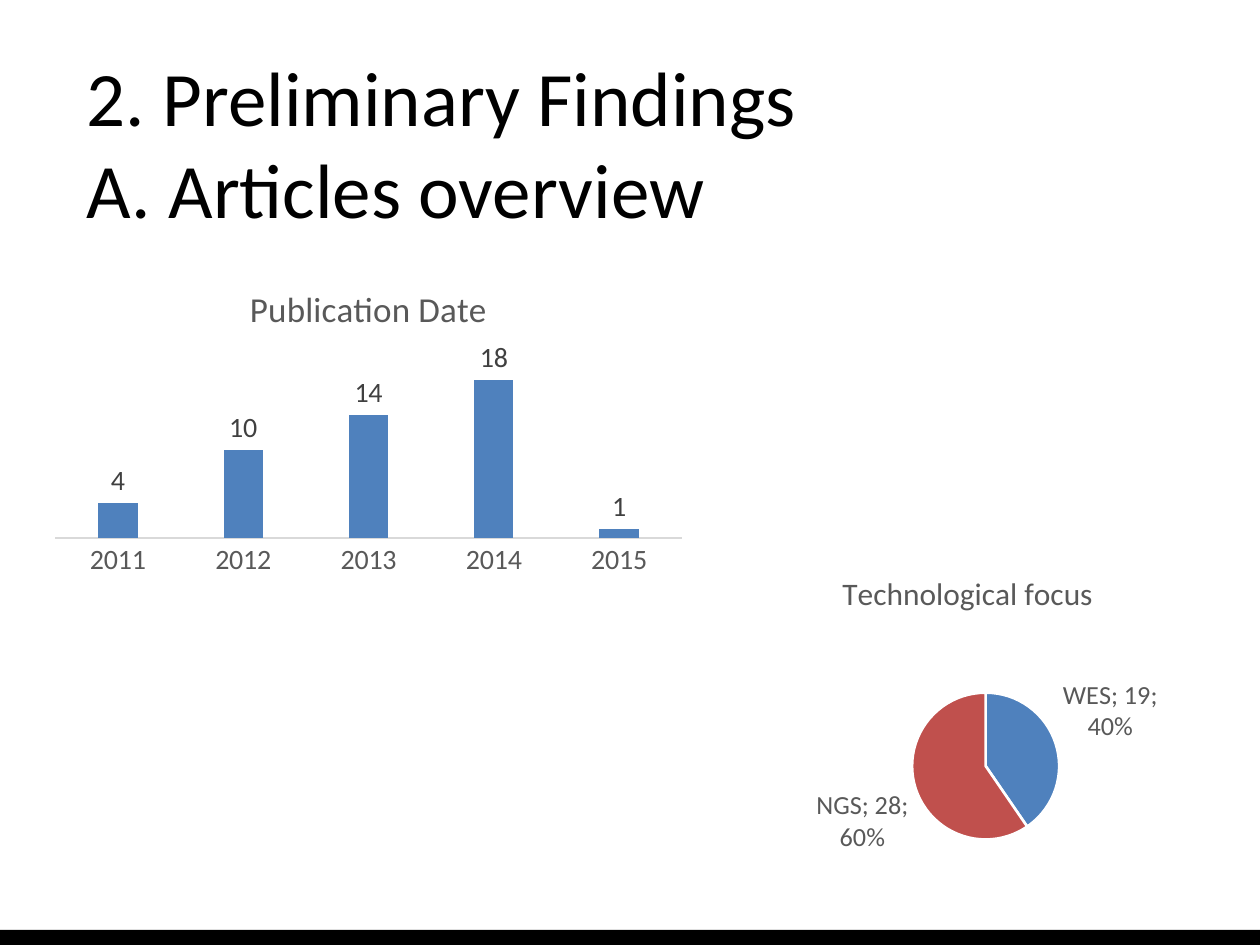
import pptx
import pptx.util
import pptx.chart.data
import pptx.dml.color
import pptx.enum.chart
import pptx.enum.shapes
import pptx.enum.text
import pptx.oxml

Inches, Pt = pptx.util.Inches, pptx.util.Pt
XL = pptx.enum.chart
COLORS = {"black": "000000", "white": "FFFFFF", "blue": "4F81BD", "red": "C0504D",
          "gray": "595959", "dark": "404040", "axis": "D9D9D9"}
FONT = "Calibri"


def rgb(name):
    return pptx.dml.color.RGBColor.from_string(COLORS[name])


def set_font(font, size, color):
    for key, value in {"name": FONT, "size": Pt(size), "bold": False}.items():
        setattr(font, key, value)
    font.color.rgb = rgb(color)


prs = pptx.Presentation()
prs.slide_width, prs.slide_height = Inches(10), Inches(7.5)
s = prs.slides.add_slide(prs.slide_layouts[6])

# Bottom bar
sp = s.shapes.add_shape(pptx.enum.shapes.MSO_SHAPE.RECTANGLE,
                        Inches(0), Inches(7.38), Inches(10), Inches(0.12))
sp.shadow.inherit = False
sp.fill.solid()
sp.fill.fore_color.rgb = rgb("black")
sp.line.fill.background()

# Heading
tf = s.shapes.add_textbox(Inches(0.59), Inches(0.4), Inches(8.95), Inches(1.45)).text_frame
for key, value in {"word_wrap": True,
                   "vertical_anchor": pptx.enum.text.MSO_ANCHOR.MIDDLE}.items():
    setattr(tf, key, value)
for i, text in enumerate(["2. Preliminary Findings", "A. Articles overview"]):
    p = tf.paragraphs[0] if i == 0 else tf.add_paragraph()
    r = p.add_run()
    r.text = text
    set_font(r.font, 44, "black")

# Charts: shared title, labels and plot position
specs = [
    {"type": XL.XL_CHART_TYPE.COLUMN_CLUSTERED, "at": (0.28, 2.1, 5.29, 2.68),
     "title": "Publication Date", "title_size": 20,
     "data": {"2011": 4, "2012": 10, "2013": 14, "2014": 18, "2015": 1},
     "label": (16, "dark"), "plot": (0.03, 0.29, 0.94, 0.52),
     "show": {"show_value": True}},
    {"type": XL.XL_CHART_TYPE.PIE, "at": (5.63, 4.38, 4.1, 2.66),
     "title": "Technological focus", "title_size": 18,
     "data": {"WES": 19, "NGS": 28},
     "label": (15, "gray"), "plot": (0.39, 0.42, 0.29, 0.44),
     "show": {"show_category_name": True, "show_value": True, "show_percentage": True}},
]
charts = []
for spec in specs:
    data = pptx.chart.data.CategoryChartData()
    data.categories = list(spec["data"])
    data.add_series("Series 1", list(spec["data"].values()))
    chart = s.shapes.add_chart(spec["type"], *map(Inches, spec["at"]), data).chart
    charts.append(chart)
    set_font(chart.font, 10, "black")
    chart.has_legend = False
    chart.has_title = True
    r = chart.chart_title.text_frame.paragraphs[0].add_run()
    r.text = spec["title"]
    set_font(r.font, spec["title_size"], "gray")
    chart.chart_title.include_in_layout = False

    labels = chart.plots[0].series[0].data_labels
    formats = {"show_value": True, "position": XL.XL_LABEL_POSITION.OUTSIDE_END}
    for key, value in {**formats, **spec["show"]}.items():
        setattr(labels, key, value)
    set_font(labels.font, *spec["label"])

    # Fixed inner plot area
    area = chart.plots[0]._element.getparent()
    for old in area.findall(pptx.oxml.ns.qn("c:layout")):
        area.remove(old)
    sizes = "".join(f'<c:{k} val="{v}"/>' for k, v in zip("xywh", spec["plot"]))
    area.insert(0, pptx.oxml.parse_xml(
        f'<c:layout {pptx.oxml.ns.nsdecls("c")}><c:manualLayout>'
        '<c:layoutTarget val="inner"/><c:xMode val="edge"/><c:yMode val="edge"/>'
        f'{sizes}</c:manualLayout></c:layout>'))

# Publication columns
column, pie = charts
plot = column.plots[0]
for key, value in {"gap_width": 219, "overlap": -27, "vary_by_categories": False}.items():
    setattr(plot, key, value)
fill = plot.series[0].format.fill
fill.solid()
fill.fore_color.rgb = rgb("blue")
axis = column.value_axis
for key, value in {"visible": False, "has_major_gridlines": False,
                   "minimum_scale": 0, "maximum_scale": 20}.items():
    setattr(axis, key, value)
axis = column.category_axis
axis.major_tick_mark = XL.XL_TICK_MARK.NONE
set_font(axis.tick_labels.font, 16, "gray")
axis.format.line.color.rgb = rgb("axis")
axis.format.line.width = Pt(0.75)

# Focus slices
pie.plots[0].vary_by_categories = True
for i, color in enumerate(["blue", "red"]):
    fmt = pie.plots[0].series[0].points[i].format
    fmt.fill.solid()
    fmt.fill.fore_color.rgb = rgb(color)
    fmt.line.color.rgb = rgb("white")
    fmt.line.width = Pt(1.5)

# White frame around the pie chart
pie._chartSpace.find(pptx.oxml.ns.qn("c:chart")).addnext(pptx.oxml.parse_xml(
    f'<c:spPr {pptx.oxml.ns.nsdecls("c", "a")}><a:noFill/><a:ln w="9525"><a:solidFill>'
    f'<a:srgbClr val="{COLORS["white"]}"/></a:solidFill></a:ln></c:spPr>'))

prs.save("out.pptx")
